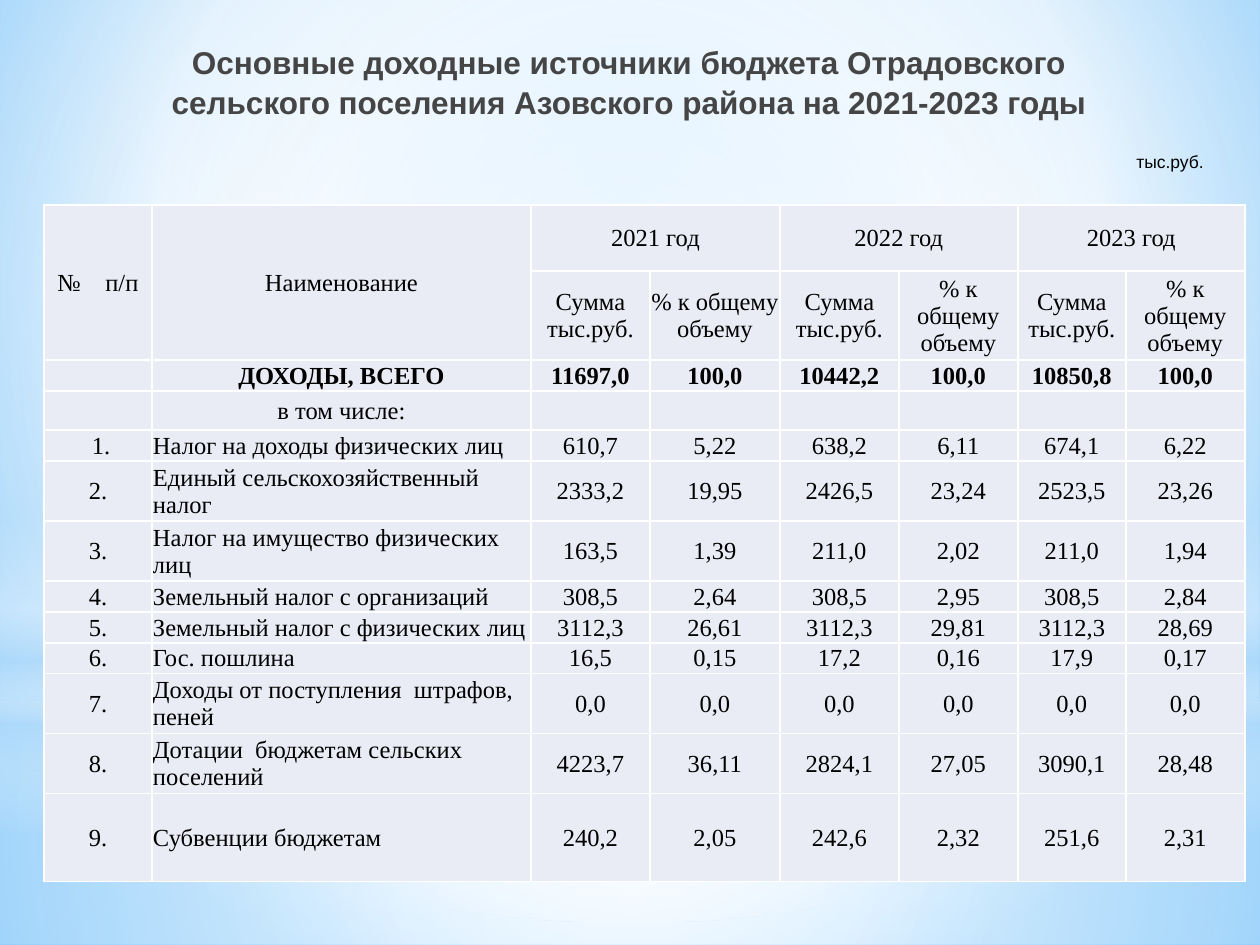
from dataclasses import dataclass
from typing import Any, NamedTuple

import pptx
import pptx.dml.color
import pptx.enum.shapes
import pptx.enum.text
import pptx.oxml
import pptx.oxml.ns
import pptx.util
from lxml import etree

PX = 914400 // 126
qn = pptx.oxml.ns.qn
ALIGN = pptx.enum.text.PP_ALIGN
ANCHOR = pptx.enum.text.MSO_ANCHOR
SHAPE = pptx.enum.shapes.MSO_SHAPE


@dataclass(frozen=True)
class Theme:
    title: str = "454545"
    text: str = "000000"
    cell: str = "E9EBF5"
    border: str = "FFFFFF"
    white: str = "FFFFFF"
    haze: str = "B4DCFA"
    sky_light: str = "9ED5FF"
    sky_deep: str = "5BB9FF"
    sans: str = "Arial"
    serif: str = "Times New Roman"
    title_size: int = 18
    unit_size: int = 10
    table_size: int = 14


class Stop(NamedTuple):
    pos: int
    color: str
    alpha: int = 100


class Glow(NamedTuple):
    shape: Any
    top: int
    height: int
    stops: tuple[Stop, ...]
    linear: bool = False


class Income(NamedTuple):
    number: str
    name: str
    values: tuple[str, ...] = ("",) * 6
    bold: bool = False
    name_align: Any = ALIGN.LEFT


T = Theme()
CENTER = (50, 50, 50, 50)
SKY = (Stop(0, T.sky_light), Stop(60, T.white), Stop(100, T.sky_deep))
GLOWS = (
    Glow(SHAPE.RECTANGLE, 703, 242,
         (Stop(0, T.white, 91), Stop(37, T.white, 76), Stop(100, T.haze, 79))),
    Glow(SHAPE.RECTANGLE, 0, 703,
         (Stop(0, T.white, 89), Stop(48, T.white, 62), Stop(100, T.haze, 79))),
    Glow(SHAPE.RECTANGLE, 519, 315,
         (Stop(0, T.white, 0), Stop(29, T.white, 30), Stop(45, T.haze, 40),
          Stop(55, T.white, 26), Stop(65, T.haze, 60), Stop(100, T.white, 0)), True),
    Glow(SHAPE.OVAL, 220, 703, (Stop(0, T.white), Stop(56, T.white, 0))),
)
COLS = (108, 379, 119, 130, 119, 119, 108, 119)
ROWS = (66, 89, 31, 39, 31, 59, 60, 31, 31, 30, 60, 60, 88)
YEARS = (2021, 2022, 2023)
INCOMES = (
    Income("", "ДОХОДЫ, ВСЕГО", ("11697,0", "100,0", "10442,2", "100,0", "10850,8", "100,0"),
           True, ALIGN.CENTER),
    Income("", "в том числе:", name_align=ALIGN.CENTER),
    Income(" 1.", "Налог на доходы физических лиц",
           ("610,7", "5,22", "638,2", "6,11", "674,1", "6,22")),
    Income("2.", "Единый сельскохозяйственный налог",
           ("2333,2", "19,95", "2426,5", "23,24", "2523,5", "23,26")),
    Income("3.", "Налог на имущество физических лиц",
           ("163,5", "1,39", "211,0", "2,02", "211,0", "1,94")),
    Income("4.", "Земельный налог с организаций",
           ("308,5", "2,64", "308,5", "2,95", "308,5", "2,84")),
    Income("5.", "Земельный налог с физических лиц",
           ("3112,3", "26,61", "3112,3", "29,81", "3112,3", "28,69")),
    Income("6.", "Гос. пошлина", ("16,5", "0,15", "17,2", "0,16", "17,9", "0,17")),
    Income("7.", "Доходы от поступления  штрафов, пеней", ("0,0",) * 6),
    Income("8.", "Дотации  бюджетам сельских поселений",
           ("4223,7", "36,11", "2824,1", "27,05", "3090,1", "28,48")),
    Income("9.", "Субвенции бюджетам", ("240,2", "2,05", "242,6", "2,32", "251,6", "2,31")),
)


def px(*values: int) -> list[int]:
    return [v * PX for v in values]


def write(tf: Any, text: str, *, size: int, font: str, color: str = T.text,
          bold: bool = False, align: Any = ALIGN.CENTER, spacing: float = 1.0) -> None:
    tf.word_wrap = True
    p = tf.paragraphs[0]
    p.alignment = align
    p.line_spacing = spacing
    if not text:
        etree.SubElement(p._p, qn("a:endParaRPr"), sz=str(size * 100))
        return
    r = p.add_run()
    r.text = text
    r.font.size = pptx.util.Pt(size)
    r.font.name = font
    r.font.bold = bold
    r.font.color.rgb = pptx.dml.color.RGBColor.from_string(color)


def set_gradient(props: Any, stops: tuple[Stop, ...], focus: tuple[int, ...],
                 linear: bool = False) -> None:
    grad = etree.Element(qn("a:gradFill"), rotWithShape="1")
    gs_list = etree.SubElement(grad, qn("a:gsLst"))
    for stop in stops:
        gs = etree.SubElement(gs_list, qn("a:gs"), pos=str(stop.pos * 1000))
        clr = etree.SubElement(gs, qn("a:srgbClr"), val=stop.color)
        if stop.alpha < 100:
            etree.SubElement(clr, qn("a:alpha"), val=str(stop.alpha * 1000))
    if linear:
        etree.SubElement(grad, qn("a:lin"), ang="5400000", scaled="0")
    else:
        circle = etree.SubElement(grad, qn("a:path"), path="circle")
        sides = {side: str(v * 1000) for side, v in zip("ltrb", focus)}
        etree.SubElement(circle, qn("a:fillToRect"), sides)
    props.replace(props.find(qn("a:solidFill")), grad)


def draw_backdrop(slide: Any) -> None:
    slide.background.fill.solid()
    set_gradient(slide._element.find(".//" + qn("p:bgPr")), SKY, (20, 10, 20, 60))
    for glow in GLOWS:
        sp = slide.shapes.add_shape(glow.shape, *px(0, glow.top, 1260, glow.height))
        sp.shadow.inherit = False
        sp.line.fill.background()
        sp.fill.solid()
        set_gradient(sp._element.spPr, glow.stops, CENTER, glow.linear)


def draw_title(slide: Any) -> None:
    sp = slide.shapes.title
    slide.shapes._spTree.append(sp._element)
    sp.left, sp.top, sp.width, sp.height = px(152, 35, 954, 158)
    sp.text_frame.vertical_anchor = ANCHOR.TOP
    write(sp.text_frame, "Основные доходные источники бюджета Отрадовского "
          "сельского поселения Азовского района на 2021-2023 годы",
          size=T.title_size, font=T.sans, color=T.title, bold=True, spacing=1.05)


def fill_cell(cell: Any, text: str, bold: bool = False, align: Any = ALIGN.CENTER) -> None:
    cell.vertical_anchor = ANCHOR.MIDDLE
    cell.margin_left = cell.margin_top = cell.margin_right = PX
    cell.margin_bottom = 0
    tc_pr = cell._tc.get_or_add_tcPr()
    for side in "LRTB":
        ln = etree.SubElement(tc_pr, qn(f"a:ln{side}"), w=str(pptx.util.Pt(1)))
        solid = etree.SubElement(ln, qn("a:solidFill"))
        etree.SubElement(solid, qn("a:srgbClr"), val=T.border)
    cell.fill.solid()
    cell.fill.fore_color.rgb = pptx.dml.color.RGBColor.from_string(T.cell)
    write(cell.text_frame, text, size=T.table_size, font=T.serif, bold=bold, align=align)


def draw_table(slide: Any) -> None:
    frame = slide.shapes.add_table(len(ROWS), len(COLS), *px(44, 205, sum(COLS), sum(ROWS)))
    table = frame.table
    table.first_row = table.horz_banding = False
    for col, width in zip(table.columns, COLS):
        col.width = width * PX
    for row, height in zip(table.rows, ROWS):
        row.height = height * PX

    years = [text for year in YEARS for text in (f"{year} год", "")]
    measures = ["Сумма тыс.руб.", "% к общему объему"] * len(YEARS)
    for r, texts in enumerate((["№    п/п", "Наименование", *years], ["", "", *measures])):
        for c, text in enumerate(texts):
            fill_cell(table.cell(r, c), text)
    for c in (0, 1):
        table.cell(0, c).merge(table.cell(1, c))
    for c in range(2, len(COLS), 2):
        table.cell(0, c).merge(table.cell(0, c + 1))

    for r, income in enumerate(INCOMES, 2):
        for c, text in enumerate((income.number, income.name, *income.values)):
            align = income.name_align if c == 1 else ALIGN.CENTER
            fill_cell(table.cell(r, c), text, income.bold, align)


def main() -> None:
    prs = pptx.Presentation()
    prs.slide_width, prs.slide_height = pptx.util.Inches(10), pptx.util.Inches(7.5)
    slide = prs.slides.add_slide(prs.slide_layouts[5])
    draw_backdrop(slide)
    draw_title(slide)
    unit = slide.shapes.add_textbox(*px(998, 145, 218, 34))
    write(unit.text_frame, "тыс.руб.", size=T.unit_size, font=T.sans, align=ALIGN.RIGHT)
    draw_table(slide)
    prs.save("out.pptx")


if __name__ == "__main__":
    main()
